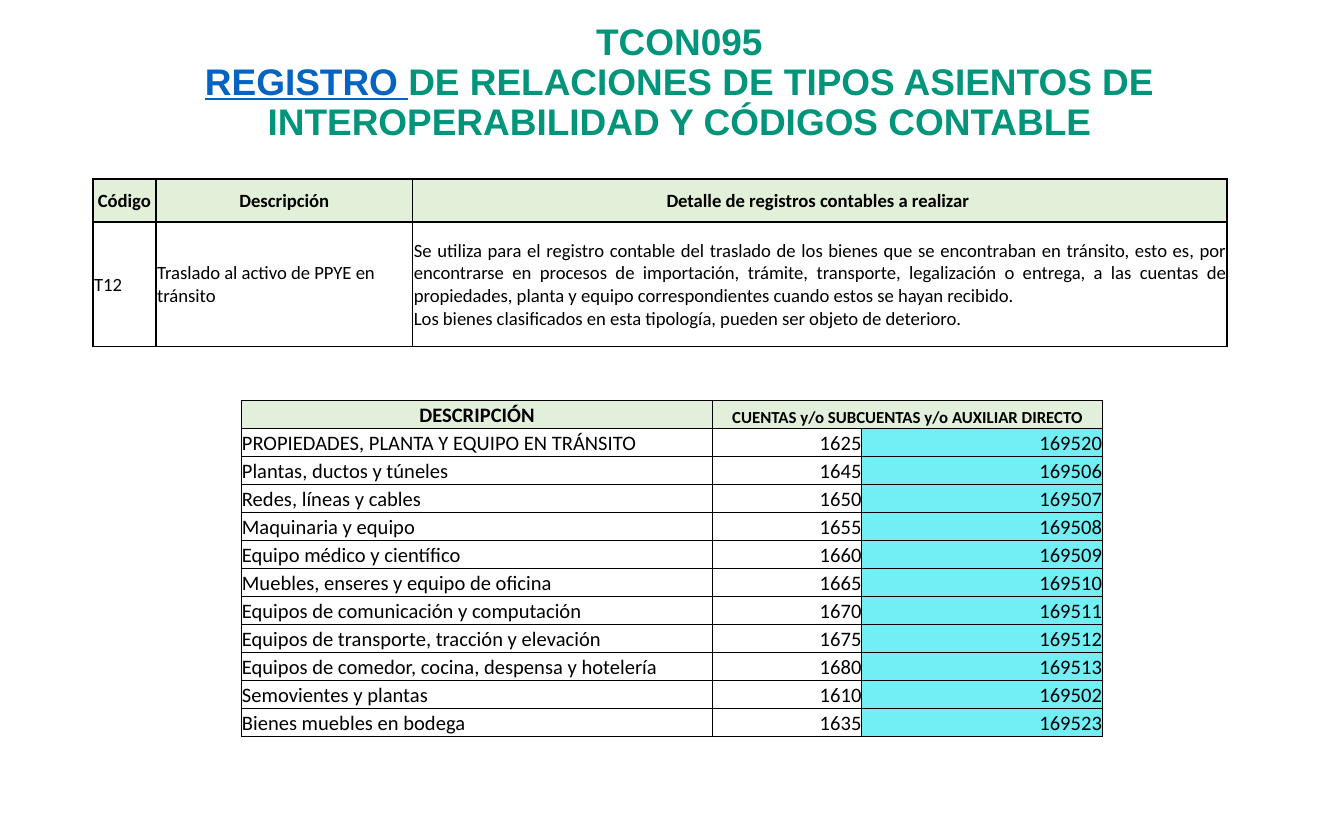
from lxml.etree import SubElement as Sub
from pptx import Presentation
from pptx.dml.color import RGBColor
from pptx.enum.text import MSO_ANCHOR as Anchor, PP_ALIGN as Align
from pptx.oxml.ns import qn
from pptx.util import Inches, Pt

TEAL = RGBColor(0x00, 0x94, 0x7A)
BLUE = RGBColor(0x05, 0x63, 0xC1)
BLACK = RGBColor(0, 0, 0)
GREEN = RGBColor(0xE2, 0xEF, 0xD9)
MINT = RGBColor(0xE2, 0xEF, 0xDA)
CYAN = RGBColor(0x71, 0xEF, 0xF5)

HEADS = ["Código", "Descripción", "Detalle de registros contables a realizar "]
DETAIL = (
    "Se utiliza para el registro contable del traslado de los bienes que se "
    "encontraban en tránsito, esto es, por encontrarse en procesos de importación, "
    "trámite, transporte, legalización o entrega, a las cuentas de propiedades, "
    "planta y equipo correspondientes cuando estos se hayan recibido. \n"
    "Los bienes clasificados en esta tipología, pueden ser objeto de deterioro."
)
ENTRY = ["T12", "Traslado al activo de PPYE en tránsito", DETAIL]
ACCOUNTS = [
    ("PROPIEDADES, PLANTA Y EQUIPO EN TRÁNSITO", "1625", "169520"),
    ("Plantas, ductos y túneles", "1645", "169506"),
    ("Redes, líneas y cables", "1650", "169507"),
    ("Maquinaria y equipo", "1655", "169508"),
    ("Equipo médico y científico", "1660", "169509"),
    ("Muebles, enseres y equipo de oficina", "1665", "169510"),
    ("Equipos de comunicación y computación", "1670", "169511"),
    ("Equipos de transporte, tracción y elevación", "1675", "169512"),
    ("Equipos de comedor, cocina, despensa y hotelería", "1680", "169513"),
    ("Semovientes y plantas", "1610", "169502"),
    ("Bienes muebles en bodega", "1635", "169523"),
]


def add_title(slide):
    """Place and format the title."""
    title = slide.shapes.title
    title.left, title.top = Inches(0.11), Inches(0.26)
    title.width, title.height = Inches(9.89), Inches(1.07)
    frame = title.text_frame
    frame.word_wrap = True
    frame.vertical_anchor = Anchor.MIDDLE
    frame.margin_top, frame.margin_bottom = 0, Inches(0.35)
    para = frame.paragraphs[0]
    para.text = "TCON095\n"
    para.alignment = Align.CENTER
    para.line_spacing = 0.9
    link = para.add_run()
    link.text = "REGISTRO "
    para.add_run().text = (
        "DE RELACIONES DE TIPOS ASIENTOS DE INTEROPERABILIDAD Y CÓDIGOS CONTABLE"
    )
    for run in para.runs:
        run.font.name, run.font.size, run.font.bold = "Arial", Pt(19.8), True
        run.font.color.rgb = TEAL
    link.font.color.rgb = BLUE
    link.font.underline = True


def add_grid(slide, left, top, cols, rows, line):
    """Add a plain table with black borders."""
    shape = slide.shapes.add_table(
        len(rows), len(cols), Inches(left), Inches(top),
        Inches(sum(cols)), Inches(sum(rows)))
    grid = shape.table
    grid.first_row = grid.horz_banding = False
    for col, width in zip(grid.columns, cols):
        col.width = Inches(width)
    for row, height in zip(grid.rows, rows):
        row.height = Inches(height)
    for cell in grid.iter_cells():
        props = cell._tc.get_or_add_tcPr()
        for side in ("lnL", "lnR", "lnT", "lnB"):
            edge = Sub(props, qn(f"a:{side}"), w=str(Pt(line)))
            fill = Sub(edge, qn("a:solidFill"))
            Sub(fill, qn("a:srgbClr"), val=str(BLACK))
        cell.fill.background()
    return grid


def fill_cell(cell, text, size, align, anchor, inset=0, bold=False, fill=None):
    """Write and format one cell."""
    cell.margin_left = cell.margin_right = cell.margin_top = Inches(inset)
    cell.margin_bottom = 0
    cell.vertical_anchor = anchor
    if fill is not None:
        cell.fill.solid()
        cell.fill.fore_color.rgb = fill
    cell.text_frame.text = text
    for para in cell.text_frame.paragraphs:
        para.alignment = align
        for run in para.runs:
            run.font.name, run.font.size, run.font.bold = "Calibri", Pt(size), bold
            run.font.color.rgb = BLACK


def add_entry(slide):
    """Add the table that describes the entry type."""
    grid = add_grid(slide, 0.69, 1.33, [0.47, 1.91, 6.06], [0.32, 0.93], 1)
    aligns = [Align.LEFT, Align.LEFT, Align.JUSTIFY]
    for col, (head, text, align) in enumerate(zip(HEADS, ENTRY, aligns)):
        fill_cell(grid.cell(0, col), head, 10, Align.CENTER, Anchor.MIDDLE,
                  0.01, True, GREEN)
        fill_cell(grid.cell(1, col), text, 10, align, Anchor.MIDDLE, 0.01)


def add_accounts(slide):
    """Add the table of accounts."""
    count = len(ACCOUNTS) + 1
    grid = add_grid(slide, 1.8, 2.98, [3.5, 1.11, 1.79], [2.5 / count] * count, 0.5)
    grid.cell(0, 1).merge(grid.cell(0, 2))
    heads = [("DESCRIPCIÓN", 11), ("CUENTAS y/o SUBCUENTAS y/o AUXILIAR DIRECTO", 9)]
    for col, (head, size) in enumerate(heads):
        fill_cell(grid.cell(0, col), head, size, Align.CENTER, Anchor.BOTTOM,
                  bold=True, fill=MINT)
    looks = [(Align.LEFT, None), (Align.RIGHT, None), (Align.RIGHT, CYAN)]
    for row, texts in enumerate(ACCOUNTS, 1):
        for col, (text, (align, fill)) in enumerate(zip(texts, looks)):
            fill_cell(grid.cell(row, col), text, 11, align, Anchor.BOTTOM, fill=fill)


def main():
    """Build and save the slide."""
    deck = Presentation()
    deck.slide_width, deck.slide_height = Inches(10), Inches(6.25)
    slide = deck.slides.add_slide(deck.slide_layouts[5])
    add_title(slide)
    add_entry(slide)
    add_accounts(slide)
    deck.save("out.pptx")


if __name__ == "__main__":
    main()
